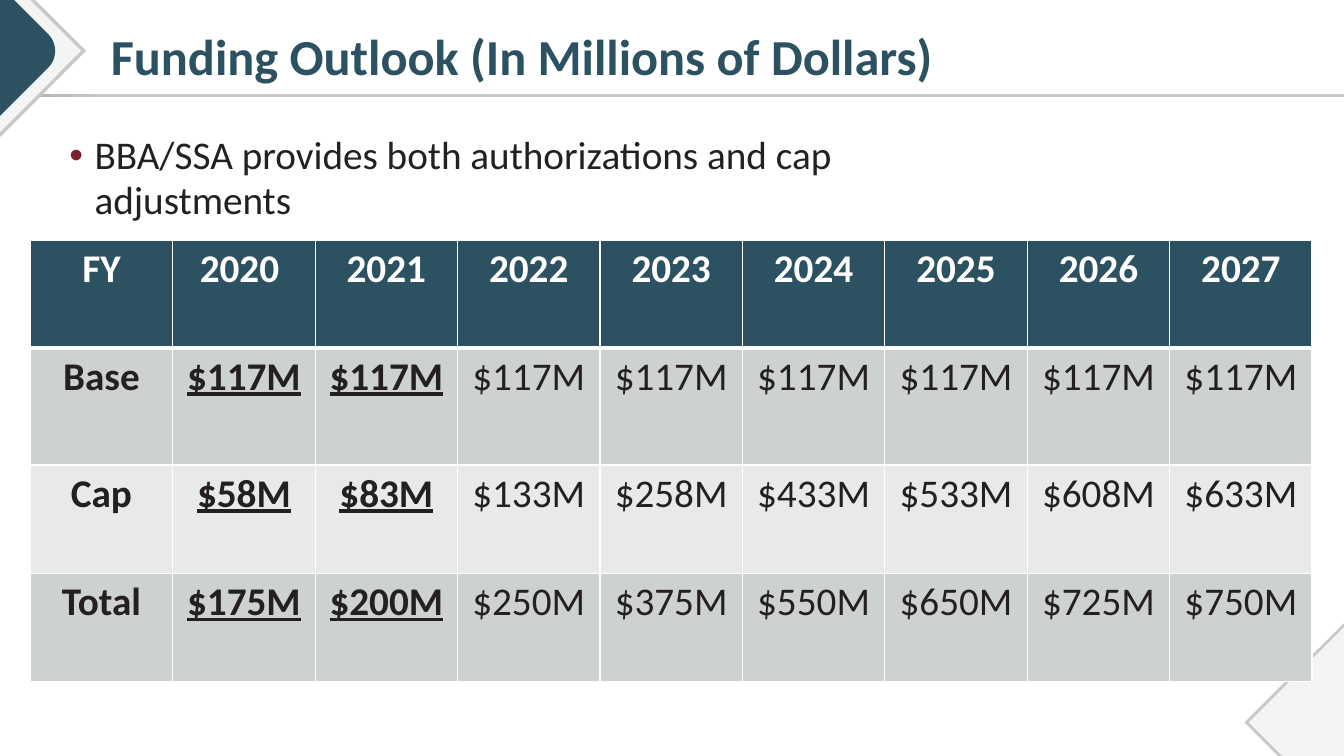
from lxml import etree
from pptx import Presentation
from pptx.dml.color import RGBColor
from pptx.enum import shapes, text
from pptx.oxml import ns
from pptx.util import Pt

COLORS = {
    "teal": "2C5261", "gray": "C8C8C6", "dark": "ABABA8", "pale": "F3F4F4",
    "ink": "242021", "wine": "7A232F", "white": "FFFFFF",
    "band": "CDD1D2", "light": "E8E9EA",
}
WIDTH, HEIGHT = 960, 540

HEADS = ["FY", "2020 ", "2021", "2022", "2023", "2024", "2025", "2026", "2027"]
ROWS = [
    ("Base", [117] * 8),
    ("Cap", [58, 83, 133, 258, 433, 533, 608, 633]),
    ("Total", [175, 200, 250, 375, 550, 650, 725, 750]),
]


def rgb(name):
    return RGBColor.from_string(COLORS[name])


def add_sub(parent, tag, **attrs):
    return etree.SubElement(parent, ns.qn(tag), **attrs)


def put_text(frame, words, size=28, color="ink", bold=False, line=False,
             align=None, space=None, bullet=None):
    para = frame.paragraphs[0]
    para.text = words
    if align is not None:
        para.alignment = align
    if space:
        para.line_spacing = space
    if bullet:
        props = para._p.get_or_add_pPr()
        props.set("marL", str(Pt(18)))
        props.set("indent", str(-Pt(18)))
        tint = add_sub(props, "a:buClr")
        add_sub(tint, "a:srgbClr", val=COLORS[bullet])
        add_sub(props, "a:buFont", typeface="Arial")
        add_sub(props, "a:buChar", char="•")
    font = para.runs[0].font
    font.name, font.size = "Calibri", Pt(size)
    font.bold, font.underline = bold, line
    font.color.rgb = rgb(color)


def curve(start, first, second, end, steps=12):
    """Points along a cubic curve, both ends included."""
    points = []
    for i in range(steps + 1):
        t = i / steps
        parts = ((1 - t) ** 3, 3 * t * (1 - t) ** 2, 3 * t * t * (1 - t), t ** 3)
        knots = (start, first, second, end)
        points.append(tuple(sum(w * k[axis] for w, k in zip(parts, knots))
                            for axis in (0, 1)))
    return points


def add_poly(slide, points, color):
    ends = [(Pt(x), Pt(y)) for x, y in points]
    build = slide.shapes.build_freeform(*ends[0], scale=1.0)
    build.add_line_segments(ends[1:], close=True)
    poly = build.convert_to_shape()
    poly.fill.solid()
    poly.fill.fore_color.rgb = rgb(color)
    poly.line.fill.background()
    poly.shadow.inherit = False


def add_decor(slide):
    # Bottom right corner
    for top, left, color in ((445, 913, "gray"), (448, 916, "pale")):
        add_poly(slide, [(WIDTH, top), (WIDTH, HEIGHT), (left, HEIGHT),
                         (left - 24, 516)], color)

    # Rule under the title
    rule = slide.shapes.add_shape(shapes.MSO_SHAPE.RECTANGLE,
                                  0, Pt(67), Pt(WIDTH), Pt(2.2))
    rule.shadow.inherit = False
    rule.line.fill.background()
    rule.fill.gradient()
    rule.fill.gradient_angle = 0
    for stop, color, place in zip(rule.fill.gradient_stops,
                                  ("dark", "gray"), (0, 0.08)):
        stop.color.rgb = rgb(color)
        stop.position = place

    # Top left corner
    for edge, tip, foot, color in ((25, 61.5, 98, "gray"), (21.5, 58, 94.5, "pale")):
        add_poly(slide, [(0, 0), (edge, 0), (tip, 36.3), (0, foot)], color)
    nose = curve((34.6, 24.5), (41, 31), (41, 41.8), (34.6, 48.2))
    add_poly(slide, [(0, 0), (10.1, 0), *nose, (0, 82.8)], "teal")


def add_title(slide, words):
    title = slide.shapes.title
    title.left, title.top = Pt(64.8), Pt(15.8)
    title.width, title.height = Pt(872.6), Pt(62)
    frame = title.text_frame
    frame.auto_size = text.MSO_AUTO_SIZE.NONE
    frame.vertical_anchor = text.MSO_ANCHOR.MIDDLE
    frame.margin_left, frame.margin_right = Pt(14.4), Pt(7.2)
    frame.margin_top, frame.margin_bottom = Pt(3.6), Pt(13)
    put_text(frame, words, size=36, color="teal", bold=True,
             align=text.PP_ALIGN.LEFT, space=0.9)


def add_body(slide, words):
    box = slide.shapes.add_textbox(Pt(42.5), Pt(92.2), Pt(626.4), Pt(347))
    box.text_frame.word_wrap = True
    put_text(box.text_frame, words, space=0.95, bullet="wine")


def add_edges(cell, head):
    props = cell._tc.get_or_add_tcPr()
    for side in "LRTB":
        thick = 3 if (head and side == "B") else 1
        edge = add_sub(props, f"a:ln{side}", w=str(Pt(thick)))
        fill = add_sub(edge, "a:solidFill")
        add_sub(fill, "a:srgbClr", val=COLORS["white"])


def fill_cell(cell, words, fill, head=False, **form):
    add_edges(cell, head)
    cell.fill.solid()
    cell.fill.fore_color.rgb = rgb(fill)
    put_text(cell.text_frame, words, align=text.PP_ALIGN.CENTER, **form)


def add_funds(slide):
    grid = slide.shapes.add_table(len(ROWS) + 1, len(HEADS), Pt(21.6), Pt(171.4),
                                  Pt(915.8), Pt(315.4)).table
    for col in grid.columns:
        col.width = Pt(915.8 / len(HEADS))
    for row, high in zip(grid.rows, (77.2, 83.6, 77.2, 77.2)):
        row.height = Pt(high)

    for c, words in enumerate(HEADS):
        fill_cell(grid.cell(0, c), words, "teal", head=True,
                  color="white", bold=True)
    for r, (label, sums) in enumerate(ROWS, 1):
        fill = "band" if r % 2 else "light"
        fill_cell(grid.cell(r, 0), label, fill, bold=True)
        for c, value in enumerate(sums, 1):
            key = c <= 2  # the first two years stand out
            fill_cell(grid.cell(r, c), f"${value}M", fill, bold=key, line=key)
    # The header's lower edge is shared with the first row
    for c in range(len(HEADS)):
        edge = grid.cell(1, c)._tc.tcPr.find(ns.qn("a:lnT"))
        edge.set("w", str(Pt(3)))


def main():
    deck = Presentation()
    deck.slide_width, deck.slide_height = Pt(WIDTH), Pt(HEIGHT)
    slide = deck.slides.add_slide(deck.slide_layouts[5])
    add_decor(slide)
    add_title(slide, "Funding Outlook (In Millions of Dollars)")
    add_body(slide, "BBA/SSA provides both authorizations and cap adjustments")
    add_funds(slide)
    deck.save("out.pptx")


if __name__ == "__main__":
    main()
